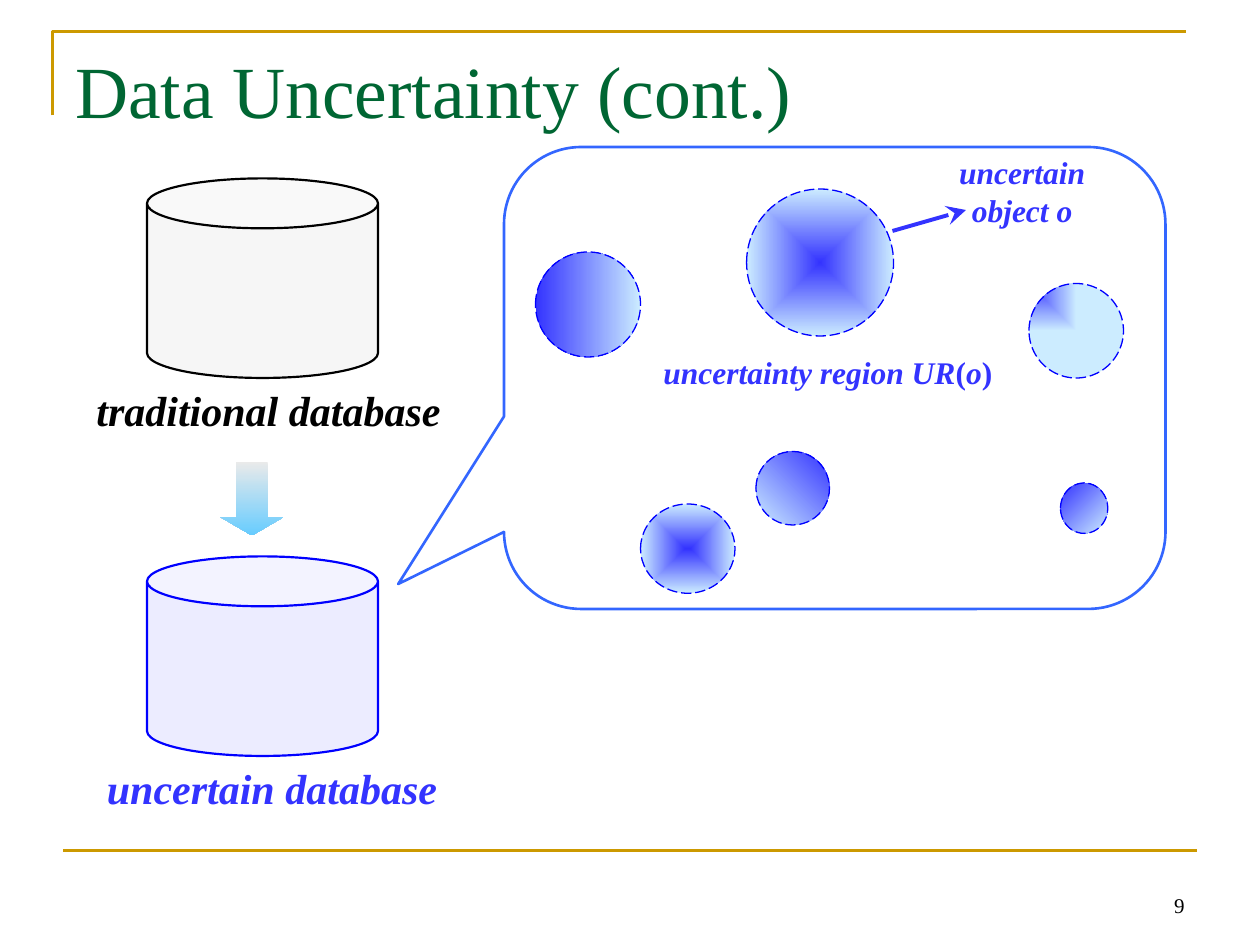
from lxml import etree
from pptx import Presentation, util as u
from pptx.dml.color import RGBColor
from pptx.enum import dml, shapes, text
from pptx.oxml import parse_xml
from pptx.oxml.ns import nsdecls, qn

# The page is a grid of 120 columns by 90 rows, twelve cells to the inch
CELL = u.Inches(1) // 12
FONT = "Times New Roman"

GOLD = RGBColor(0xCC, 0x99, 0x00)
GREEN = RGBColor(0x00, 0x66, 0x33)
BLACK = RGBColor(0x00, 0x00, 0x00)
SILVER = RGBColor(0xC0, 0xC0, 0xC0)
GREY = RGBColor(0xEA, 0xEA, 0xEA)
BLUE = RGBColor(0x33, 0x33, 0xFF)
PURE_BLUE = RGBColor(0x00, 0x00, 0xFF)
CALLOUT_BLUE = RGBColor(0x33, 0x66, 0xFF)
PALE_BLUE = RGBColor(0xCC, 0xEC, 0xFF)
SKY = RGBColor(0x66, 0xCC, 0xFF)

TITLE = {"size": u.Pt(42)}
NUMBER = {"size": u.Pt(12)}
CAPTION = {"size": u.Pt(24), "bold": True, "italic": True}
LABEL = {"size": u.Pt(18), "bold": True, "italic": True}

# Gradient directions: to the middle, or to the top left corner
CENTRE = ("shape", (50, 50, 50, 50))
CORNER = ("rect", (0, 0, 100, 100))

# Uncertain objects: grid place, gradient colours, gradient direction
OBJECTS = [
    ((98, 27, 9, 9), (BLUE, PALE_BLUE), CORNER),
    ((71.1, 18, 14, 14), (BLUE, PALE_BLUE), CENTRE),
    ((72, 43, 7, 7), (PALE_BLUE, BLUE), 315),
    ((51, 24, 10, 10), (BLUE, PALE_BLUE), 0),
    ((101, 46, 4.5, 4.8), (BLUE, PALE_BLUE), 45),
    ((61, 48, 9, 8.5), (BLUE, PALE_BLUE), CENTRE),
]


def cells(*counts):
    return [int(count * CELL) for count in counts]


def style_line(line, color, width, dash=None):
    line.color.rgb = color
    line.width = u.Pt(width)
    if dash:
        line.dash_style = dash


def add_shape(page, kind, place, adjustments=()):
    shape = page.shapes.add_shape(kind, *cells(*place))
    shape.shadow.inherit = False
    shape.fill.background()
    shape.line.fill.background()
    for index, value in enumerate(adjustments):
        shape.adjustments[index] = value
    return shape


def fill_gradient(shape, colors, direction):
    """Direction is an angle in degrees, or a path with its focus sides."""
    shape.fill.gradient()
    gradient = shape.fill.gradient_stops
    for stop, color, position in zip(gradient, colors, (0, 1)):
        stop.color.rgb = color
        stop.position = position
    fill = shape._element.spPr.find(qn("a:gradFill"))
    linear = fill.find(qn("a:lin"))
    if isinstance(direction, tuple):
        kind, sides = direction
        fill.remove(linear)
        route = etree.SubElement(fill, qn("a:path"), path=kind)
        focus = etree.SubElement(route, qn("a:fillToRect"))
        for side, share in zip("ltrb", sides):
            focus.set(side, str(share * 1000))
    else:
        linear.set("ang", str(direction * 60000))
        linear.set("scaled", "0")


def add_text(page, place, lines, color, style, wrap=False,
             align=text.PP_ALIGN.LEFT, anchor=text.MSO_ANCHOR.TOP):
    """Each line is a list of (words, changes to the style)."""
    box = page.shapes.add_textbox(*cells(*place))
    frame = box.text_frame
    frame.word_wrap = wrap
    if not wrap:
        frame.auto_size = text.MSO_AUTO_SIZE.SHAPE_TO_FIT_TEXT
    frame.vertical_anchor = anchor
    for index, spans in enumerate(lines):
        para = frame.add_paragraph() if index else frame.paragraphs[0]
        para.alignment = align
        for words, changes in spans:
            span = para.add_run()
            span.text = words
            span.font.color.rgb = color
            for name, value in {"name": FONT, **style, **changes}.items():
                setattr(span.font, name, value)


def add_line(page, start, end, color, width, arrow=None):
    line = page.shapes.add_connector(
        shapes.MSO_CONNECTOR.STRAIGHT, *cells(*start, *end))
    style_line(line.line, color, width)
    if arrow:
        etree.SubElement(line.line._get_or_add_ln(), qn("a:tailEnd"),
                         type=arrow, w="lg", len="lg")
    line._element.spPr.append(parse_xml(f"<a:effectLst {nsdecls('a')}/>"))


def add_corner_rule(page):
    start, *rest = [tuple(cells(*point)) for point in ((5, 11), (5, 3), (113, 3))]
    builder = page.shapes.build_freeform(*start)
    builder.add_line_segments(rest, close=False)
    rule = builder.convert_to_shape()
    rule.shadow.inherit = False
    rule.fill.background()
    style_line(rule.line, GOLD, 1.5)


def add_database(page, top, fill, opacity, outline):
    can = add_shape(page, shapes.MSO_SHAPE.CAN, (14, top, 22, 19), [0.25])
    can.fill.solid()
    can.fill.fore_color.rgb = fill
    color = can._element.spPr.find(qn("a:solidFill"))[0]
    etree.SubElement(color, qn("a:alpha"), val=str(opacity * 1000))
    style_line(can.line, outline, 1.25)


def add_object(page, place, colors, direction):
    circle = add_shape(page, shapes.MSO_SHAPE.OVAL, place)
    fill_gradient(circle, colors, direction)
    style_line(circle.line, PURE_BLUE, 0.75, dml.MSO_LINE.LONG_DASH)


def main():
    deck = Presentation()
    deck.slide_width, deck.slide_height = cells(120, 90)
    page = deck.slides.add_slide(deck.slide_layouts[6])

    # Frame: rules, title and page number
    add_corner_rule(page)
    add_line(page, (6, 81), (114, 81), GOLD, 1.5)
    add_text(page, (6, 3.7, 108, 15), [[("Data Uncertainty (cont.)", {})]],
             GREEN, TITLE, wrap=True)
    add_text(page, (86, 82, 28, 6), [[("9", {})]], BLACK, NUMBER, wrap=True,
             align=text.PP_ALIGN.RIGHT, anchor=text.MSO_ANCHOR.BOTTOM)

    # Left: from the traditional to the uncertain database
    add_database(page, 17, SILVER, 14, BLACK)
    add_text(page, (8, 36, 35.2, 6), [[("traditional database", {})]],
             BLACK, CAPTION)
    arrow = add_shape(page, shapes.MSO_SHAPE.DOWN_ARROW, (21, 44, 6, 7),
                      [0.5, 0.29])
    fill_gradient(arrow, (GREY, SKY), 90)
    add_database(page, 53, BLUE, 9, PURE_BLUE)
    add_text(page, (9, 72, 34, 6), [[("uncertain database", {})]],
             BLUE, CAPTION)

    # Right: callout with the uncertain objects
    callout = add_shape(page, shapes.MSO_SHAPE.ROUNDED_RECTANGULAR_CALLOUT,
                        (48, 14, 63, 44), [-0.66, 0.446, 0.167])
    style_line(callout.line, CALLOUT_BLUE, 1.5)
    for place, colors, direction in OBJECTS:
        add_object(page, place, colors, direction)

    # Labels of the largest object
    upright = {"italic": False}
    add_text(page, (62, 33, 33.7, 4.8),
             [[("uncertainty region UR", {}), ("(", upright), ("o", {}),
               (")", upright)]], BLUE, LABEL)
    add_line(page, (85, 22), (92, 20), BLUE, 2.25, arrow="stealth")
    add_text(page, (89.8, 14, 15.1, 8.4),
             [[("uncertain", {})], [("object o", {})]], BLUE, LABEL,
             align=text.PP_ALIGN.CENTER)

    deck.save("out.pptx")


if __name__ == "__main__":
    main()
